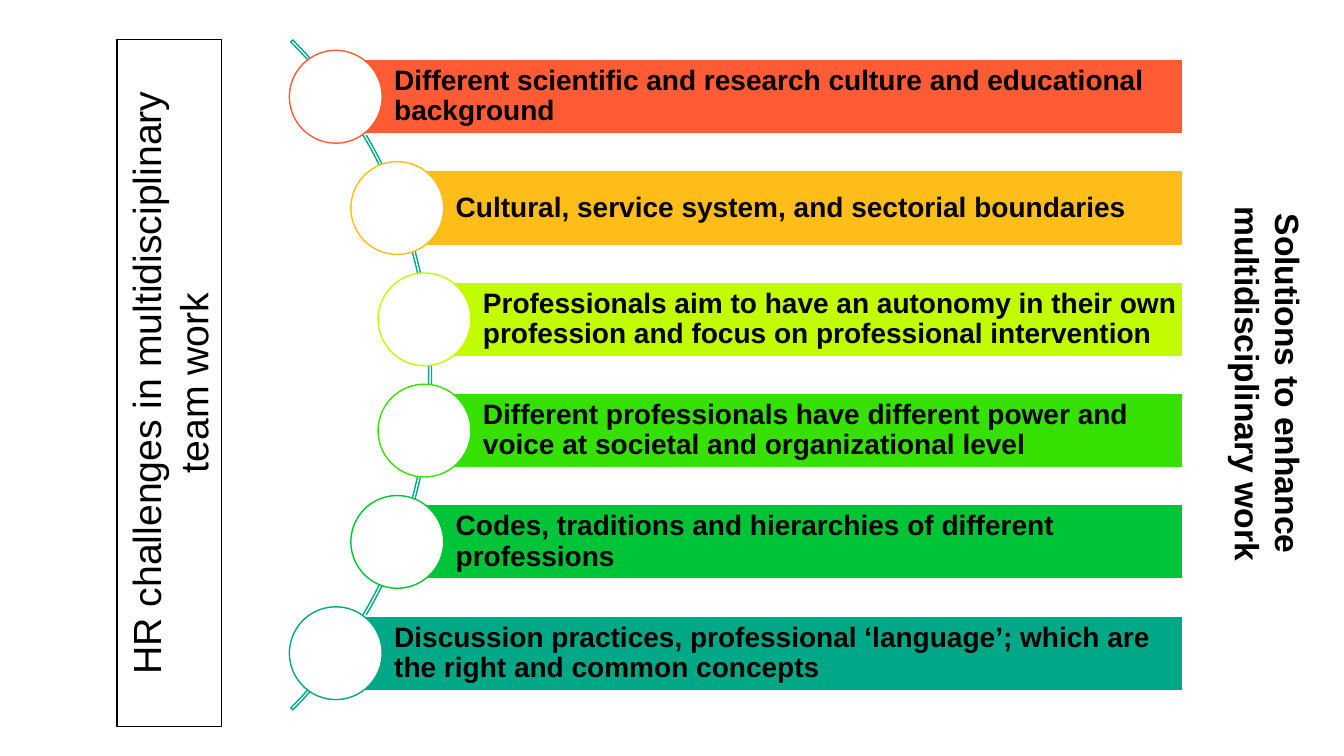
from dataclasses import dataclass

from pptx import Presentation
from pptx.dml.color import RGBColor
from pptx.enum.shapes import MSO_SHAPE
from pptx.enum.text import MSO_ANCHOR, MSO_AUTO_SIZE, PP_ALIGN
from pptx.util import Inches, Pt


@dataclass(frozen=True)
class Theme:
    font: str = "Arial"
    ink: str = "000000"
    paper: str = "FFFFFF"
    arc: str = "00A887"
    title: int = 28
    side: int = 24
    body: int = 20
    line: int = 1


THEME = Theme()

CHALLENGES = [
    ("Different scientific and research culture and educational background", "FF5B35", 0),
    ("Cultural, service system, and sectorial boundaries", "FFBD19", 0.61),
    ("Professionals aim to have an autonomy in their own profession and focus on "
     "professional intervention", "C1FC00", 0.88),
    ("Different professionals have different power and voice at societal and "
     "organizational level", "36E000", 0.88),
    ("Codes, traditions and hierarchies of different professions", "00C437", 0.61),
    ("Discussion practices, professional ‘language’; which are the right and common "
     "concepts", "00A887", 0),
]


def color(value):
    return RGBColor.from_string(value)


def place(sp, x, y, w, h, rotation=0):
    sp.left, sp.top, sp.width, sp.height = map(Inches, (x, y, w, h))
    sp.rotation = rotation


def style(sp, fill, line):
    if fill:
        sp.fill.solid()
        sp.fill.fore_color.rgb = color(fill)
    else:
        sp.fill.background()
    sp.line.color.rgb = color(line)
    sp.line.width = Pt(THEME.line)


def add_shape(s, kind, x, y, w, h, fill, line):
    sp = s.shapes.add_shape(kind, *map(Inches, (x, y, w, h)))
    sp.shadow.inherit = False
    style(sp, fill, line)
    return sp


def write(sp, text, size, bold, align, anchor):
    tf = sp.text_frame
    tf.word_wrap = True
    tf.auto_size = MSO_AUTO_SIZE.NONE
    tf.vertical_anchor = anchor
    p = tf.paragraphs[0]
    p.text = text
    p.alignment = align
    p.font.name = THEME.font
    p.font.size = Pt(size)
    p.font.bold = bold
    p.font.color.rgb = color(THEME.ink)
    return tf


def add_title(s, x, y, w, h):
    sp = s.shapes.title
    place(sp, x, y, w, h, 270)
    style(sp, THEME.paper, THEME.ink)
    write(sp, "HR challenges in multidisciplinary\vteam work", THEME.title, False,
          PP_ALIGN.CENTER, MSO_ANCHOR.TOP)


def add_challenge(s, x, y, right, text, fill):
    circle = 0.92
    bar_x = x + circle / 2
    bar = add_shape(s, MSO_SHAPE.RECTANGLE, bar_x, y + 0.09, right - bar_x, 0.74,
                    fill, THEME.paper)
    tf = write(bar, text, THEME.body, True, PP_ALIGN.LEFT, MSO_ANCHOR.MIDDLE)
    tf.margin_left = Inches(0.58)
    tf.margin_right = 0
    tf.margin_top = tf.margin_bottom = Inches(0.06)
    tf.paragraphs[0].line_spacing = 0.9
    add_shape(s, MSO_SHAPE.OVAL, x, y, circle, circle, THEME.paper, fill)


def add_challenges(s, x, y, w, h):
    size = 9.4
    arc = add_shape(s, MSO_SHAPE.BLOCK_ARC, x - 7.99, y + h / 2 - size / 2, size, size,
                    None, THEME.arc)
    for i, value in enumerate((189, 27, 0.003)):
        arc.adjustments[i] = value
    step = (h - 0.92) / (len(CHALLENGES) - 1)
    for i, (text, fill, indent) in enumerate(CHALLENGES):
        add_challenge(s, x + indent, y + i * step, x + w, text, fill)


def add_solutions(s, x, y, w, h):
    sp = s.shapes.add_textbox(0, 0, 0, 0)
    place(sp, x, y, w, h, 90)
    write(sp, "Solutions to enhance multidisciplinary work", THEME.side, True,
          PP_ALIGN.CENTER, MSO_ANCHOR.TOP)


def main():
    prs = Presentation()
    prs.slide_width = Inches(13.33)
    prs.slide_height = Inches(7.5)
    s = prs.slides.add_slide(prs.slide_layouts[5])
    add_title(s, -1.73, 3.28, 6.82, 1.04)
    add_challenges(s, 2.87, 0.5, 8.86, 6.44)
    add_solutions(s, 9.77, 3.35, 5.61, 0.91)
    prs.save("out.pptx")


if __name__ == "__main__":
    main()
